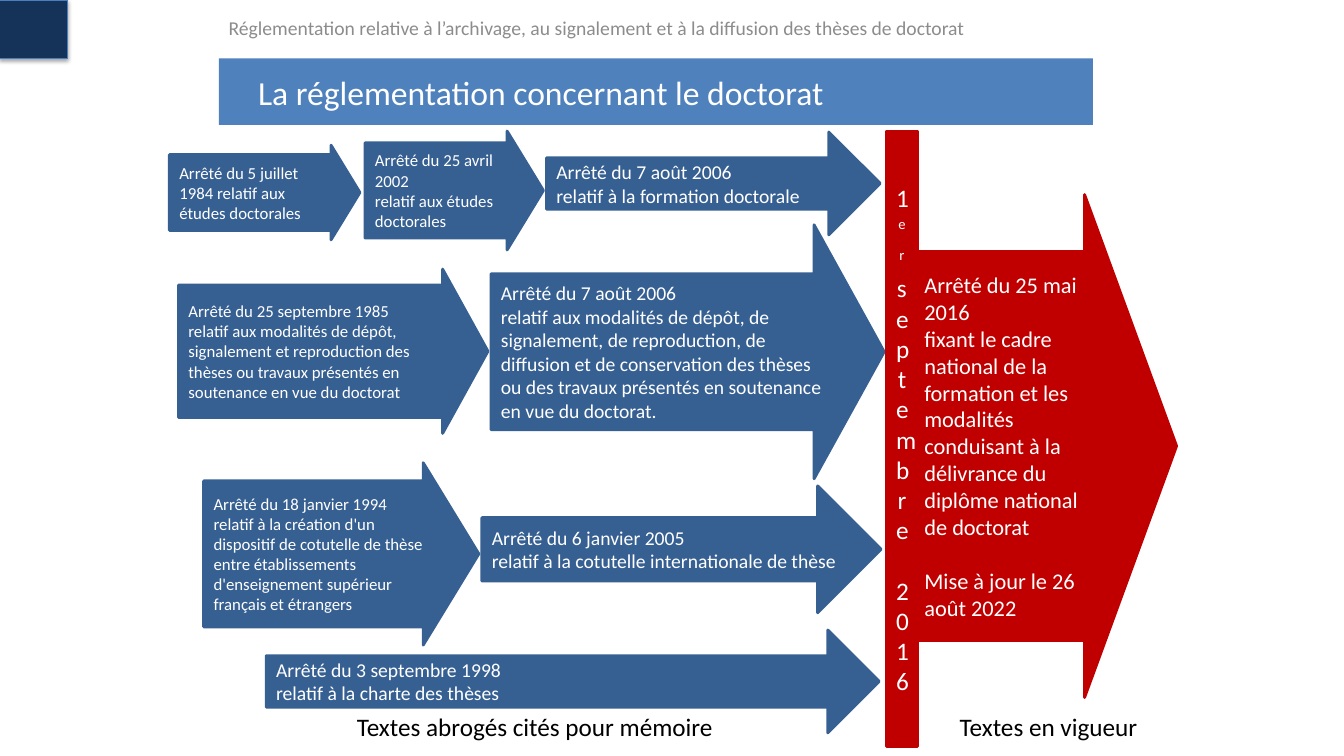
import pptx
import pptx.util
import pptx.oxml
import pptx.oxml.ns
import pptx.dml.color
import pptx.enum.shapes
import pptx.enum.text

Inches, Pt = pptx.util.Inches, pptx.util.Pt
RGB = pptx.dml.color.RGBColor.from_string
SHAPE = pptx.enum.shapes.MSO_SHAPE
ALIGN = pptx.enum.text.PP_ALIGN
ANCHOR = pptx.enum.text.MSO_ANCHOR
AUTO = pptx.enum.text.MSO_AUTO_SIZE

COLORS = {"title": "4F81BD", "repealed": "376092", "in_force": "C00000",
          "corner": "153258", "corner_line": "4B7EBC", "header": "8C8C8C",
          "white": "FFFFFF", "black": "000000"}

# box, text size, head adjustments, paragraphs
REPEALED = [
    ((2.64, 6.25, 6.08, 1.02), 14, (0.5, 0.5),
     ["Arrêté du 3 septembre 1998", "relatif à la charte des thèses"]),
    ((4.78, 4.82, 3.96, 1.26), 14, (0.5, 0.5),
     ["Arrêté du 6 janvier 2005", "relatif à la cotutelle internationale de thèse"]),
    ((5.42, 1.31, 3.31, 1.02), 14, (0.5, 0.5),
     ["Arrêté du 7 août 2006", "relatif à la formation doctorale"]),
    ((4.87, 2.23, 3.9, 2.52), 14, (0.613, 0.276),
     ["Arrêté du 7 août 2006",
      "relatif aux modalités de dépôt, de signalement, de reproduction, de diffusion et de "
      "conservation des thèses ou des travaux présentés en soutenance en vue du doctorat."]),
    ((1.77, 2.67, 3.07, 1.63), 12, (0.806, 0.276),
     ["Arrêté du 25 septembre 1985",
      "relatif aux modalités de dépôt, signalement et reproduction des thèses ou travaux "
      "présentés en soutenance en vue du doctorat"]),
    ((2.02, 4.59, 2.73, 1.81), 12, (0.8, 0.305),
     ["Arrêté du 18 janvier 1994",
      "relatif à la création d'un dispositif de cotutelle de thèse entre établissements "
      "d'enseignement supérieur français et étrangers"]),
    ((3.62, 1.3, 1.77, 1.18), 12, (0.8, 0.305),
     ["Arrêté du 25 avril 2002", "relatif aux études doctorales"]),
    ((1.68, 1.44, 1.89, 0.94), 12, (0.8, 0.305),
     ["Arrêté du 5 juillet 1984 relatif aux études doctorales"]),
]
IN_FORCE = ["Arrêté du 25 mai 2016",
            "fixant le cadre national de la formation et les modalités conduisant à la "
            "délivrance du diplôme national de doctorat",
            "Mise à jour le 26 août 2022"]


def write(sp, paragraphs, size, color, align=ALIGN.LEFT, anchor=ANCHOR.MIDDLE):
    """Fill a shape with paragraphs, each a string or a list of run strings."""
    tf = sp.text_frame
    tf.word_wrap = True
    tf.vertical_anchor = anchor
    font = {"name": "Calibri", "size": Pt(size)}
    for i, runs in enumerate(paragraphs):
        p = tf.paragraphs[0] if i == 0 else tf.add_paragraph()
        p.alignment = align
        for text in [runs] if isinstance(runs, str) else runs:
            r = p.add_run()
            r.text = text
            for name, value in font.items():
                setattr(r.font, name, value)
            r.font.color.rgb = RGB(COLORS[color])
    return tf


def add_block(s, kind, box, fill, line=None, width=2):
    sp = s.shapes.add_shape(kind, *map(Inches, box))
    sp.shadow.inherit = False
    sp.fill.solid()
    sp.fill.fore_color.rgb = RGB(COLORS[fill])
    sp.line.color.rgb = RGB(COLORS[line or fill])
    sp.line.width = Pt(width)
    return sp


def add_label(s, box, text, size, color, anchor=ANCHOR.TOP, auto_size=AUTO.NONE):
    sp = s.shapes.add_textbox(*map(Inches, box))
    write(sp, [text], size, color, anchor=anchor).auto_size = auto_size


def add_arrow(s, box, fill, size, adjustments, paragraphs):
    sp = add_block(s, SHAPE.RIGHT_ARROW, box, fill)
    for i, value in enumerate(adjustments):
        sp.adjustments[i] = value
    return write(sp, paragraphs, size, "white")


def add_corner(s, box):
    """Dark square with a soft shadow below it."""
    sp = add_block(s, SHAPE.RECTANGLE, box, "corner", "corner_line", 0.75)
    effects = sp._element.spPr.find(pptx.oxml.ns.qn("a:effectLst"))
    effects.append(pptx.oxml.parse_xml(
        f'<a:outerShdw {pptx.oxml.ns.nsdecls("a")} blurRad="39370" dist="22860" dir="5400000" '
        'rotWithShape="0"><a:srgbClr val="000000"><a:alpha val="35000"/></a:srgbClr>'
        '</a:outerShdw>'))


def add_title(s, box):
    sp = s.shapes.title
    sp.left, sp.top, sp.width, sp.height = map(Inches, box)
    sp.fill.solid()
    sp.fill.fore_color.rgb = RGB(COLORS["title"])
    tf = write(sp, ["La réglementation concernant le doctorat"], 24, "white")
    tf.margin_left = Inches(0.39)
    tf.auto_size = AUTO.NONE


def add_date_banner(s, box):
    """Column too narrow for two letters, so that the date reads downwards."""
    sp = add_block(s, SHAPE.RECTANGLE, box, "in_force")
    tf = write(sp, [["1", "er", " septembre 2016"]], 18, "white", ALIGN.CENTER)
    tf.paragraphs[0].runs[1]._r.get_or_add_rPr().set("baseline", "30000")


def add_in_force(s, box):
    tf = add_arrow(s, box, "in_force", 16, (0.773, 0.351), IN_FORCE)
    tf.paragraphs[-1].space_before = Pt(19.5)


def main():
    prs = pptx.Presentation()
    prs.slide_width, prs.slide_height = Inches(13.33), Inches(7.5)
    s = prs.slides.add_slide(prs.slide_layouts[5])
    add_corner(s, (0, 0, 0.67, 0.58))
    add_title(s, (2.17, 0.58, 8.67, 0.66))
    add_label(s, (2.17, 0, 7.8, 0.54),
              "Réglementation relative à l’archivage, au signalement et à la diffusion "
              "des thèses de doctorat", 14, "header", ANCHOR.MIDDLE)
    for box, size, adjustments, paragraphs in REPEALED:
        add_arrow(s, box, "repealed", size, adjustments, paragraphs)
    add_in_force(s, (9.07, 1.93, 2.6, 4.99))
    add_date_banner(s, (8.79, 1.3, 0.31, 6.11))
    for left, width, text in [(3.44, 4.49, "Textes abrogés cités pour mémoire"),
                              (9.42, 2.24, "Textes en vigueur")]:
        add_label(s, (left, 7.01, width, 0.4), text, 18, "black",
                  auto_size=AUTO.SHAPE_TO_FIT_TEXT)
    prs.save("out.pptx")


if __name__ == "__main__":
    main()
